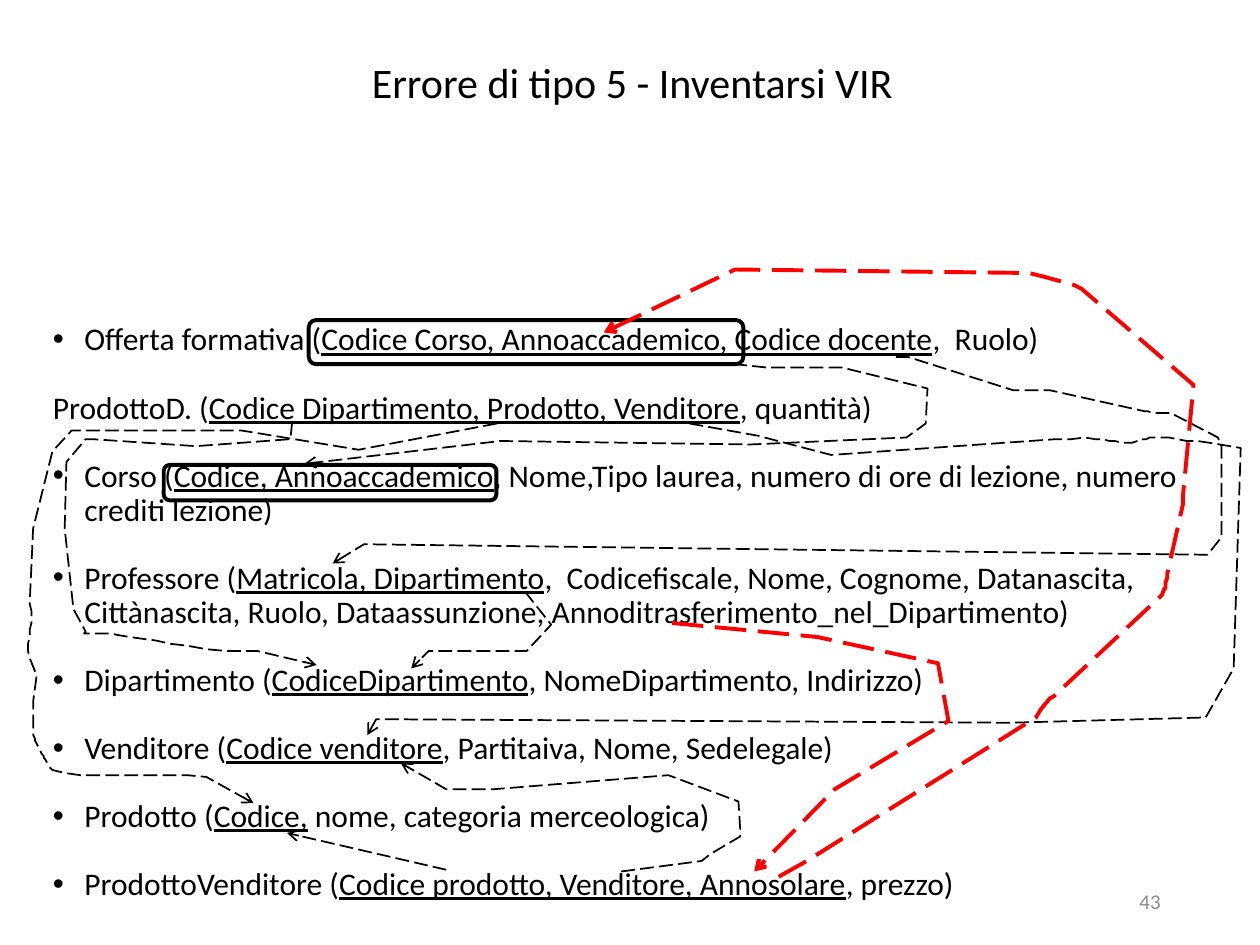
from lxml.etree import SubElement
from pptx import Presentation
from pptx.dml.color import RGBColor
from pptx.enum.dml import MSO_LINE
from pptx.enum.shapes import MSO_SHAPE
from pptx.enum.text import MSO_ANCHOR, MSO_AUTO_SIZE, PP_ALIGN
from pptx.oxml.ns import qn
from pptx.util import Pt

BLACK = RGBColor(0, 0, 0)
RED = RGBColor(255, 0, 0)
GREY = RGBColor(140, 140, 140)

TITLE = "Errore di tipo 5 - Inventarsi VIR "
PAGE_NUMBER = "43"
INDENT = 18
ROW_GAP = 19.44
CURVE_STEPS = 8

# bulleted, relation, key, other attributes
RELATIONS = [
    (True, "Offerta formativa (", "Codice Corso, Annoaccademico, Codice docente", ",  Ruolo)"),
    (False, "ProdottoD. (", "Codice Dipartimento, Prodotto, Venditore", ", quantità)"),
    (True, "Corso (", "Codice, Annoaccademico",
     ", Nome,Tipo laurea, numero di ore di lezione, numero crediti lezione)"),
    (True, "Professore (", "Matricola, Dipartimento",
     ",  Codicefiscale, Nome, Cognome, Datanascita, Cittànascita, Ruolo, "
     "Dataassunzione, Annoditrasferimento_nel_Dipartimento)"),
    (True, "Dipartimento (", "CodiceDipartimento", ", NomeDipartimento, Indirizzo)"),
    (True, "Venditore (", "Codice venditore", ", Partitaiva, Nome, Sedelegale)"),
    (True, "Prodotto (", "Codice,", " nome, categoria merceologica)"),
    (True, "ProdottoVenditore (", "Codice prodotto, Venditore, Annosolare", ", prezzo)"),
]

KEY_FRAMES = [(176.4, 182.9, 248.4, 25.2), (93.6, 265.7, 190.1, 20.2)]

REFERENCES = [
    [(419, 208), (438, 210), (481, 210), (530, 222), (529, 242), (518, 250),
     (429, 254), (286, 252), (174, 265)],
    [(394, 242), (433, 249), (475, 260), (603, 251), (631, 249, 634, 253, 644, 253),
     (654, 252, 652, 250, 663, 250), (674, 251, 694, 253, 709, 256), (705, 382),
     (689, 410), (578, 413), (215, 411), (210, 420)],
    [(355, 498), (401, 492), (406, 488), (423, 478), (423, 474), (422, 458),
     (382, 443), (282, 451), (255, 451), (229, 436)],
    [(167, 241), (166, 251), (112, 255), (53, 251), (49, 251), (38, 264), (37, 302),
     (42, 348), (49, 361), (45, 364, 53, 361, 68, 363), (84, 364, 107, 372, 141, 372),
     (147, 372), (181, 380)],
    [(284, 242), (205, 257), (138, 246), (41, 246), (30, 258), (19, 302), (17, 345),
     (21, 356, 14, 364, 17, 376), (21, 386), (19, 401), (19, 416),
     (19, 422, 21, 424, 24, 431), (27, 432, 23, 440, 39, 442),
     (54, 444, 91, 441, 118, 444), (145, 459)],
    [(255, 497), (164, 476)],
    [(512, 204), (519, 204), (579, 223), (600, 223), (654, 235),
     (662, 236, 657, 236, 669, 236), (696, 250), (700, 259, 698, 253, 698, 271),
     (698, 307), (690, 317), (208, 311), (190, 322)],
    [(300, 338), (315, 357), (301, 372), (245, 372), (235, 382)],
]
INVENTED = [
    [(445, 501), (461, 492), (592, 410), (595, 405), (600, 399), (602, 398),
     (664, 340), (668, 330, 665, 340, 667, 330), (667, 328), (676, 288), (676, 283),
     (682, 220), (618, 165), (614, 163), (607, 161), (596, 158), (588, 156),
     (420, 154), (345, 190)],
    [(384, 356), (467, 364), (536, 379), (542, 412), (477, 451), (431, 498)],
]


def apply(target, values):
    for name, value in values.items():
        setattr(target, name, value)


def place(box, left, top, width, height):
    apply(box, dict(left=Pt(left), top=Pt(top), width=Pt(width), height=Pt(height)))


def add_span(para, text, size, color, underline=False):
    span = para.add_run()
    span.text = text
    apply(span.font, dict(name="Calibri", size=Pt(size), underline=underline))
    span.font.color.rgb = color


def set_bullet(para, bulleted):
    properties = para._p.get_or_add_pPr()
    indent = Pt(INDENT) if bulleted else 0
    properties.set("marL", str(indent))
    properties.set("indent", str(-indent))
    if bulleted:
        SubElement(properties, qn("a:buFont"), typeface="Arial")
        SubElement(properties, qn("a:buChar"), char="•")
    else:
        SubElement(properties, qn("a:buNone"))


def outline(shape, color, width):
    shape.shadow.inherit = False
    shape.fill.background()
    shape.line.color.rgb = color
    shape.line.width = Pt(width)


def flatten(route):
    points = [route[0]]
    for step in route[1:]:
        if len(step) == 2:
            points.append(step)
            continue
        controls = [points[-1], step[:2], step[2:4], step[4:]]
        for index in range(1, CURVE_STEPS + 1):
            t = index / CURVE_STEPS
            weights = ((1 - t) ** 3, 3 * t * (1 - t) ** 2, 3 * t ** 2 * (1 - t), t ** 3)
            points.append(tuple(sum(w * c[axis] for w, c in zip(weights, controls))
                                for axis in (0, 1)))
    return points


def add_arrow(page, route, color, width):
    points = flatten(route)
    builder = page.shapes.build_freeform(*points[0], scale=float(Pt(1)))
    builder.add_line_segments(points[1:], close=False)
    arrow = builder.convert_to_shape()
    outline(arrow, color, width)
    arrow.line.dash_style = MSO_LINE.LONG_DASH
    SubElement(arrow._element.spPr.find(qn("a:ln")), qn("a:tailEnd"), type="arrow")


def main():
    deck = Presentation()
    apply(deck, dict(slide_width=Pt(720), slide_height=Pt(540)))
    page = deck.slides.add_slide(deck.slide_layouts[1])

    title = page.shapes.title
    place(title, 18.7, 20.2, 690.5, 56.2)
    apply(title.text_frame, dict(auto_size=MSO_AUTO_SIZE.NONE, vertical_anchor=MSO_ANCHOR.MIDDLE))
    para = title.text_frame.paragraphs[0]
    apply(para, dict(alignment=PP_ALIGN.CENTER, line_spacing=0.9))
    add_span(para, TITLE, 24, BLACK)

    body = page.placeholders[1]
    place(body, 23, 181.4, 688.3, 349.2)
    frame = body.text_frame
    apply(frame, dict(auto_size=MSO_AUTO_SIZE.NONE, vertical_anchor=MSO_ANCHOR.TOP))
    for row, (bulleted, relation, key, others) in enumerate(RELATIONS):
        para = frame.add_paragraph() if row else frame.paragraphs[0]
        set_bullet(para, bulleted)
        apply(para, dict(line_spacing=0.9, space_before=Pt(ROW_GAP if row else 0)))
        for text, underline in ((relation, False), (key, True), (others, False)):
            add_span(para, text, 18, BLACK, underline)

    for left, top, width, height in KEY_FRAMES:
        key_frame = page.shapes.add_shape(MSO_SHAPE.ROUNDED_RECTANGLE, Pt(left), Pt(top),
                                          Pt(width), Pt(height))
        outline(key_frame, BLACK, 2.25)

    for routes, color, width in ((REFERENCES, BLACK, 1), (INVENTED, RED, 2.25)):
        for route in routes:
            add_arrow(page, route, color, width)

    number = page.shapes.add_textbox(Pt(508.3), Pt(500.4), Pt(162), Pt(28.8))
    apply(number.text_frame, dict(word_wrap=True, vertical_anchor=MSO_ANCHOR.MIDDLE))
    para = number.text_frame.paragraphs[0]
    para.alignment = PP_ALIGN.RIGHT
    add_span(para, PAGE_NUMBER, 12, GREY)

    deck.save("out.pptx")


if __name__ == "__main__":
    main()
